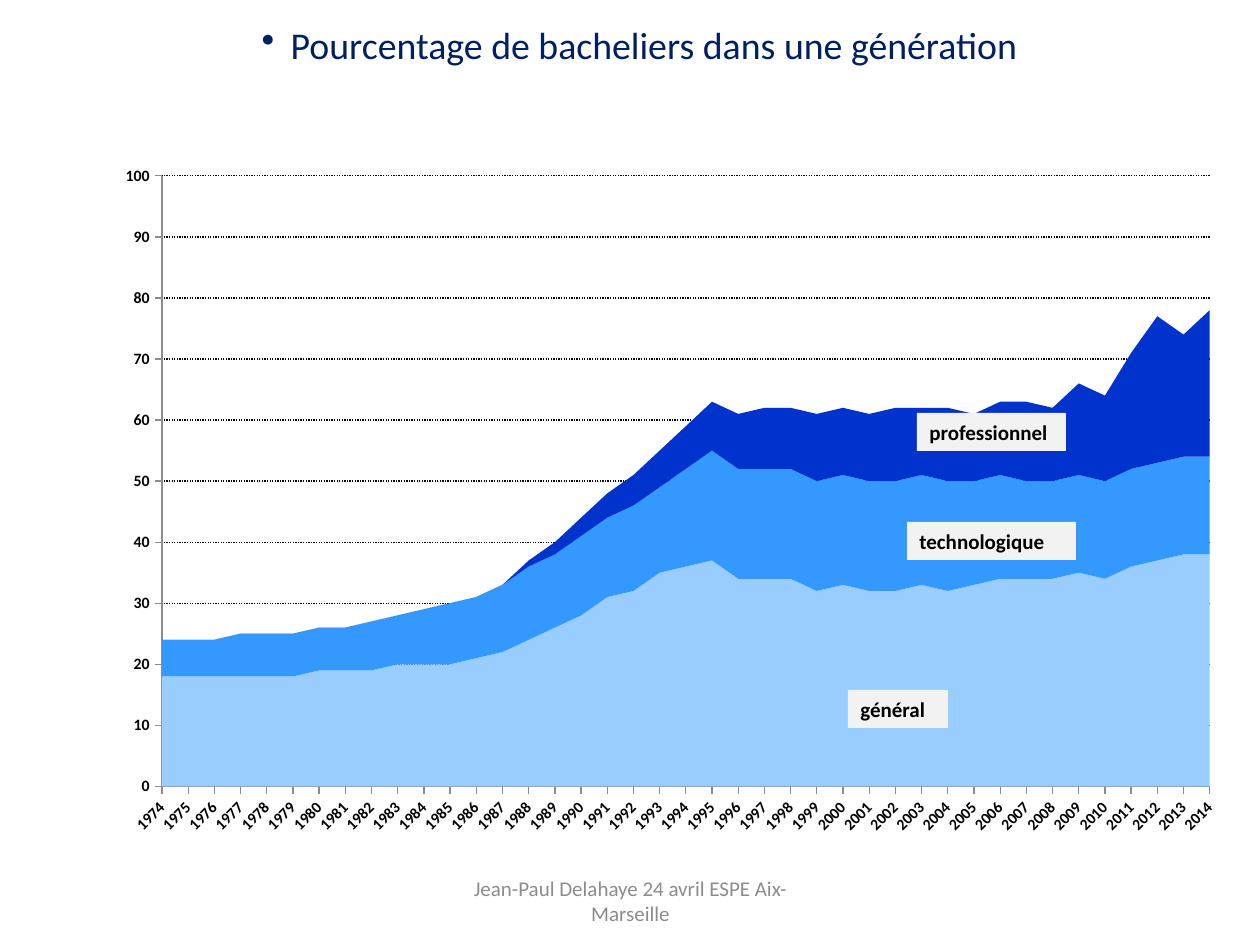
from lxml.etree import SubElement
from pptx import Presentation
from pptx.chart.data import CategoryChartData
from pptx.dml.color import RGBColor
from pptx.enum.chart import XL_CHART_TYPE, XL_TICK_MARK
from pptx.enum.dml import MSO_LINE
from pptx.enum.shapes import MSO_SHAPE
from pptx.enum.text import MSO_ANCHOR, PP_ALIGN
from pptx.oxml.ns import qn
from pptx.util import Pt

SCALE = 914400 / 126
BLACK = RGBColor(0x00, 0x00, 0x00)
NAVY = RGBColor(0x00, 0x20, 0x60)
GREY = RGBColor(0x8C, 0x8C, 0x8C)
PALE = RGBColor(0xF2, 0xF2, 0xF2)
SKY = RGBColor(0x99, 0xCC, 0xFF)
BLUE = RGBColor(0x33, 0x99, 0xFF)
DEEP = RGBColor(0x00, 0x33, 0xCC)

YEARS = [str(year) for year in range(1974, 2015)]
SERIES = [
    ("général", SKY,
     [18, 18, 18, 18, 18, 18, 19, 19, 19, 20, 20, 20, 21, 22,
      24, 26, 28, 31, 32, 35, 36, 37, 34, 34, 34, 32, 33, 32,
      32, 33, 32, 33, 34, 34, 34, 35, 34, 36, 37, 38, 38]),
    ("technologique", BLUE,
     [6, 6, 6, 7, 7, 7, 7, 7, 8, 8, 9, 10, 10, 11,
      12, 12, 13, 13, 14, 14, 16, 18, 18, 18, 18, 18, 18, 18,
      18, 18, 18, 17, 17, 16, 16, 16, 16, 16, 16, 16, 16]),
    ("professionnel", DEEP,
     [0, 0, 0, 0, 0, 0, 0, 0, 0, 0, 0, 0, 0, 0,
      1, 2, 3, 4, 5, 6, 7, 8, 9, 10, 10, 11, 11, 11,
      12, 11, 12, 11, 12, 13, 12, 15, 14, 19, 24, 20, 24]),
]
TAGS = [(743, 535, 100, 38), (802, 367, 169, 38), (812, 258, 149, 38)]


def emu(*sizes):
    """Turn px lengths into EMU."""
    return [round(size * SCALE) for size in sizes]


def style(font, size, color, bold=False):
    """Set the look of a font."""
    font.name, font.size, font.bold = "Calibri", Pt(size), bold
    font.color.rgb = color


def write(shape, text, size, color, align, anchor, bold=False):
    """Fill a shape with one paragraph and return it."""
    frame = shape.text_frame
    frame.word_wrap = True
    frame.vertical_anchor = anchor
    para = frame.paragraphs[0]
    para.text, para.alignment = text, align
    style(para.font, size, color, bold)
    return para


def add_title(slide, box):
    """Place the bulleted heading."""
    shape = slide.shapes.add_textbox(*emu(*box))
    para = write(shape, "Pourcentage de bacheliers dans une génération",
                 21.6, NAVY, PP_ALIGN.CENTER, MSO_ANCHOR.TOP)
    props = para._p.get_or_add_pPr()
    indent, = emu(29)
    props.set("marL", str(indent))
    props.set("indent", str(-indent))
    bullet = props.makeelement(qn("a:buChar"), {"char": "•"})
    props.insert(0, bullet)


def set_axis(axis):
    """Give an axis its ticks, line and labels."""
    axis.major_tick_mark = XL_TICK_MARK.OUTSIDE
    axis.minor_tick_mark = XL_TICK_MARK.NONE
    axis.format.line.color.rgb = GREY
    axis.format.line.width = Pt(0.75)
    style(axis.tick_labels.font, 9, BLACK, True)


def set_plot(chart, **sides):
    """Fix the inner plot area as shares of the chart."""
    area = chart._chartSpace.chart.plotArea
    for old in area.findall(qn("c:layout")):
        area.remove(old)
    layout = area.makeelement(qn("c:layout"), {})
    area.insert(0, layout)
    manual = SubElement(layout, qn("c:manualLayout"))
    marks = {"layoutTarget": "inner", "xMode": "edge", "yMode": "edge"}
    for name, value in {**marks, **sides}.items():
        SubElement(manual, qn(f"c:{name}")).set("val", str(value))


def add_graph(slide, box):
    """Place the stacked areas and their labels."""
    data = CategoryChartData()
    data.categories = YEARS
    for name, _, values in SERIES:
        data.add_series(name, values)
    chart = slide.shapes.add_chart(
        XL_CHART_TYPE.AREA_STACKED, *emu(*box), data).chart
    chart.has_legend = chart.has_title = False
    style(chart.font, 10, BLACK)
    plot = chart.plots[0]
    plot.vary_by_categories = False
    for series, (_, color, _) in zip(plot.series, SERIES):
        series.format.fill.solid()
        series.format.fill.fore_color.rgb = color
    years, scale = chart.category_axis, chart.value_axis
    set_axis(years)
    set_axis(scale)
    years.has_major_gridlines = False
    years._element.find(qn("c:txPr")).find(qn("a:bodyPr")).set("rot", "-2700000")
    scale._element.find(qn("c:crossBetween")).set("val", "midCat")
    scale.minimum_scale, scale.maximum_scale, scale.major_unit = 0, 100, 10
    scale.tick_labels.number_format = "0"
    scale.tick_labels.number_format_is_linked = False
    grid = scale.major_gridlines.format.line
    grid.color.rgb, grid.width = BLACK, Pt(0.75)
    grid.dash_style = MSO_LINE.ROUND_DOT
    set_plot(chart, x=0.05, y=0.03, w=0.92, h=0.88)
    for (name, _, _), (x, y, w, h) in zip(SERIES, TAGS):
        add_tag(slide, (box[0] + x, box[1] + y, w, h), name)


def add_tag(slide, box, text):
    """Place one series label."""
    shape = slide.shapes.add_shape(MSO_SHAPE.RECTANGLE, *emu(*box))
    shape.shadow.inherit = False
    shape.fill.solid()
    shape.fill.fore_color.rgb = PALE
    shape.line.fill.background()
    write(shape, text, 12, BLACK, PP_ALIGN.LEFT, MSO_ANCHOR.TOP, True)


def add_foot(slide, box):
    """Place the footer."""
    shape = slide.shapes.add_textbox(*emu(*box))
    write(shape, "Jean-Paul Delahaye 24 avril ESPE Aix-Marseille",
          12, GREY, PP_ALIGN.CENTER, MSO_ANCHOR.MIDDLE)


def main():
    """Build the slide and save it."""
    deck = Presentation()
    deck.slide_width, deck.slide_height = emu(1260, 945)
    slide = deck.slides.add_slide(deck.slide_layouts[6])
    add_title(slide, (94, 16, 1091, 100))
    add_graph(slide, (105, 155, 1139, 694))
    add_foot(slide, (431, 876, 399, 50))
    deck.save("out.pptx")


if __name__ == "__main__":
    main()
